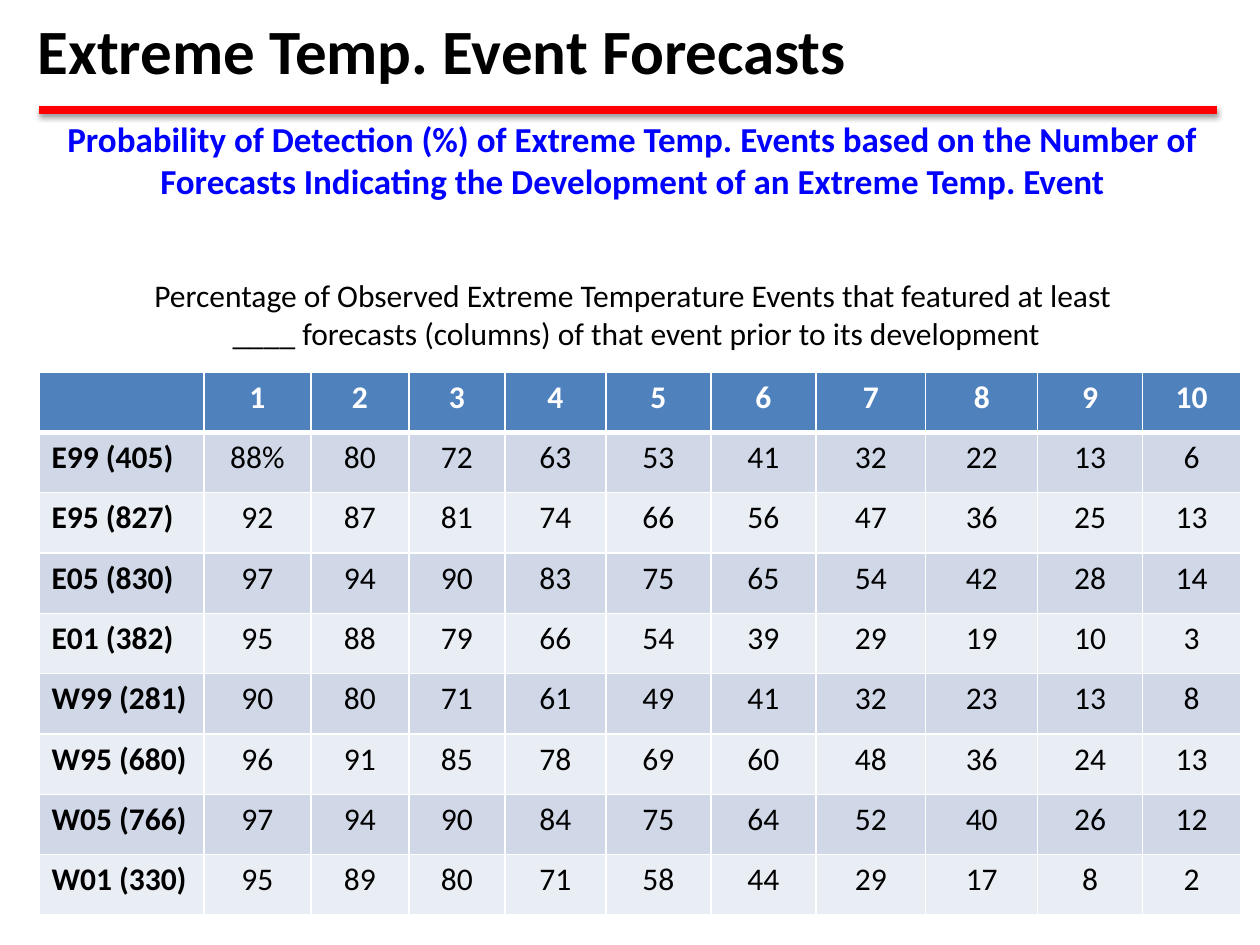
"""Build the slide on detection of extreme temperature events by number of forecasts."""
from lxml.etree import SubElement
from pptx import Presentation
from pptx.dml.color import RGBColor
from pptx.enum.shapes import MSO_CONNECTOR
from pptx.enum.text import MSO_AUTO_SIZE, PP_ALIGN
from pptx.oxml.ns import qn
from pptx.util import Pt

SCALE = 914400 // 126
FONT = "Calibri"
COLORS = {
    "text": "000000", "subtitle": "0000FF", "rule": "FF0000", "white": "FFFFFF",
    "header": "4F81BD", "band_dark": "D0D8E8", "band_light": "E9EDF4",
}

TEXTS = [
    {"lines": ["Extreme Temp. Event Forecasts"], "at": (25, 5, 1283, 89),
     "size": 36, "bold": True, "color": "text", "align": PP_ALIGN.LEFT},
    {"lines": ["Probability of Detection (%) of Extreme Temp. Events based on the Number of "
               "Forecasts Indicating the Development of an Extreme Temp. Event"],
     "at": (25, 111, 1215, 97),
     "size": 20, "bold": True, "color": "subtitle", "align": PP_ALIGN.CENTER},
    {"lines": ["Percentage of Observed Extreme Temperature Events that featured at least ",
               "____ forecasts (columns) of that event prior to its development"],
     "at": (81, 270, 1111, 89),
     "size": 18, "bold": False, "color": "text", "align": PP_ALIGN.CENTER},
]
RULE = (39, 110, 1217, 110)

ROWS = [
    ["", *range(1, 11)],
    ["E99 (405)", "88%", 80, 72, 63, 53, 41, 32, 22, 13, 6],
    ["E95 (827)", 92, 87, 81, 74, 66, 56, 47, 36, 25, 13],
    ["E05 (830)", 97, 94, 90, 83, 75, 65, 54, 42, 28, 14],
    ["E01 (382)", 95, 88, 79, 66, 54, 39, 29, 19, 10, 3],
    ["W99 (281)", 90, 80, 71, 61, 49, 41, 32, 23, 13, 8],
    ["W95 (680)", 96, 91, 85, 78, 69, 60, 48, 36, 24, 13],
    ["W05 (766)", 97, 94, 90, 84, 75, 64, 52, 40, 26, 12],
    ["W01 (330)", 95, 89, 80, 71, 58, 44, 29, 17, 8, 2],
]
COLUMN_WIDTHS = [165, 107, 98, 96, 101, 105, 105, 110, 112, 105, 98]
TABLE_LEFT, TABLE_TOP, TABLE_HEIGHT = 39, 372, 543


def px(*lengths):
    return [length * SCALE for length in lengths]


def rgb(name):
    return RGBColor.from_string(COLORS[name])


def write(frame, lines, size, bold, color, align):
    frame.text = "\n".join(lines)
    for para in frame.paragraphs:
        para.alignment = align
        for span in para.runs:
            span.font.name = FONT
            span.font.size = Pt(size)
            span.font.bold = bold
            span.font.color.rgb = rgb(color)


def add_text(slide, at, **style):
    frame = slide.shapes.add_textbox(*px(*at)).text_frame
    frame.word_wrap = True
    frame.auto_size = MSO_AUTO_SIZE.SHAPE_TO_FIT_TEXT
    write(frame, **style)


def add_rule(slide):
    rule = slide.shapes.add_connector(MSO_CONNECTOR.STRAIGHT, *px(*RULE))
    rule.line.color.rgb = rgb("rule")
    rule.line.width = Pt(4.5)
    effects = SubElement(rule.element.spPr, qn("a:effectLst"))
    shadow = SubElement(effects, qn("a:outerShdw"), blurRad="40000", dist="20000",
                        dir="5400000", rotWithShape="0")
    shade = SubElement(shadow, qn("a:srgbClr"), val=COLORS["text"])
    SubElement(shade, qn("a:alpha"), val="38000")


def add_borders(cell, row):
    widths = {"L": 1, "R": 1, "T": 3 if row == 1 else 1, "B": 3 if row == 0 else 1}
    properties = cell._tc.get_or_add_tcPr()
    for side, width in widths.items():
        border = SubElement(properties, qn(f"a:ln{side}"), w=str(Pt(width)))
        fill = SubElement(border, qn("a:solidFill"))
        SubElement(fill, qn("a:srgbClr"), val=COLORS["white"])


def add_detection_table(slide):
    place = px(TABLE_LEFT, TABLE_TOP, sum(COLUMN_WIDTHS), TABLE_HEIGHT)
    table = slide.shapes.add_table(len(ROWS), len(COLUMN_WIDTHS), *place).table
    for column, width in zip(table.columns, COLUMN_WIDTHS):
        column.width = width * SCALE
    for row, values in enumerate(ROWS):
        band = "header" if row == 0 else "band_dark" if row % 2 else "band_light"
        for column, value in enumerate(values):
            cell = table.cell(row, column)
            add_borders(cell, row)
            cell.fill.solid()
            cell.fill.fore_color.rgb = rgb(band)
            write(cell.text_frame, [str(value)], 18, row == 0 or column == 0,
                  "text" if row else "white",
                  PP_ALIGN.CENTER if column else PP_ALIGN.LEFT)


def main():
    deck = Presentation()
    deck.slide_width, deck.slide_height = px(1260, 945)
    slide = deck.slides.add_slide(deck.slide_layouts[6])
    add_rule(slide)
    for text in TEXTS:
        add_text(slide, **text)
    add_detection_table(slide)
    deck.save("out.pptx")


if __name__ == "__main__":
    main()
